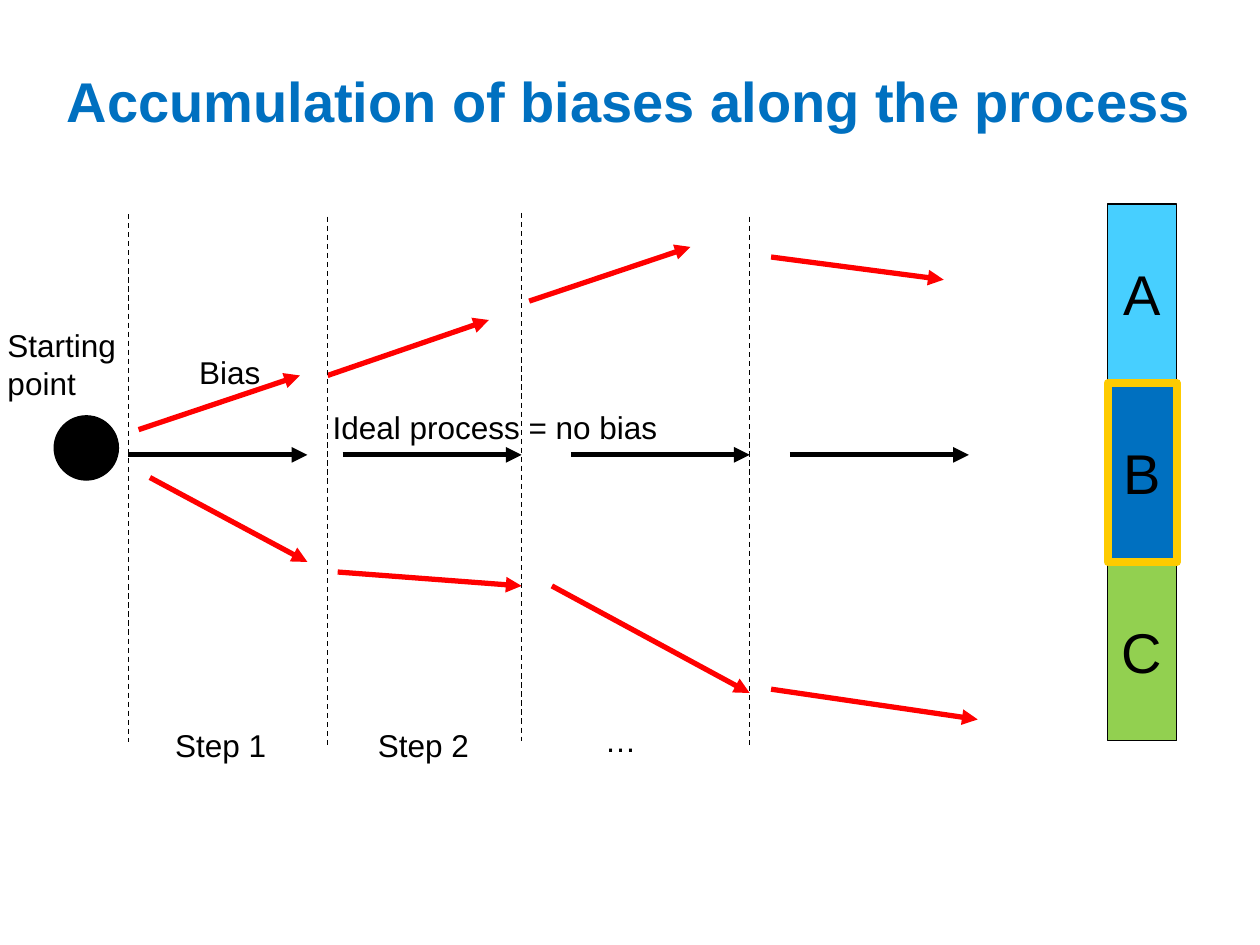
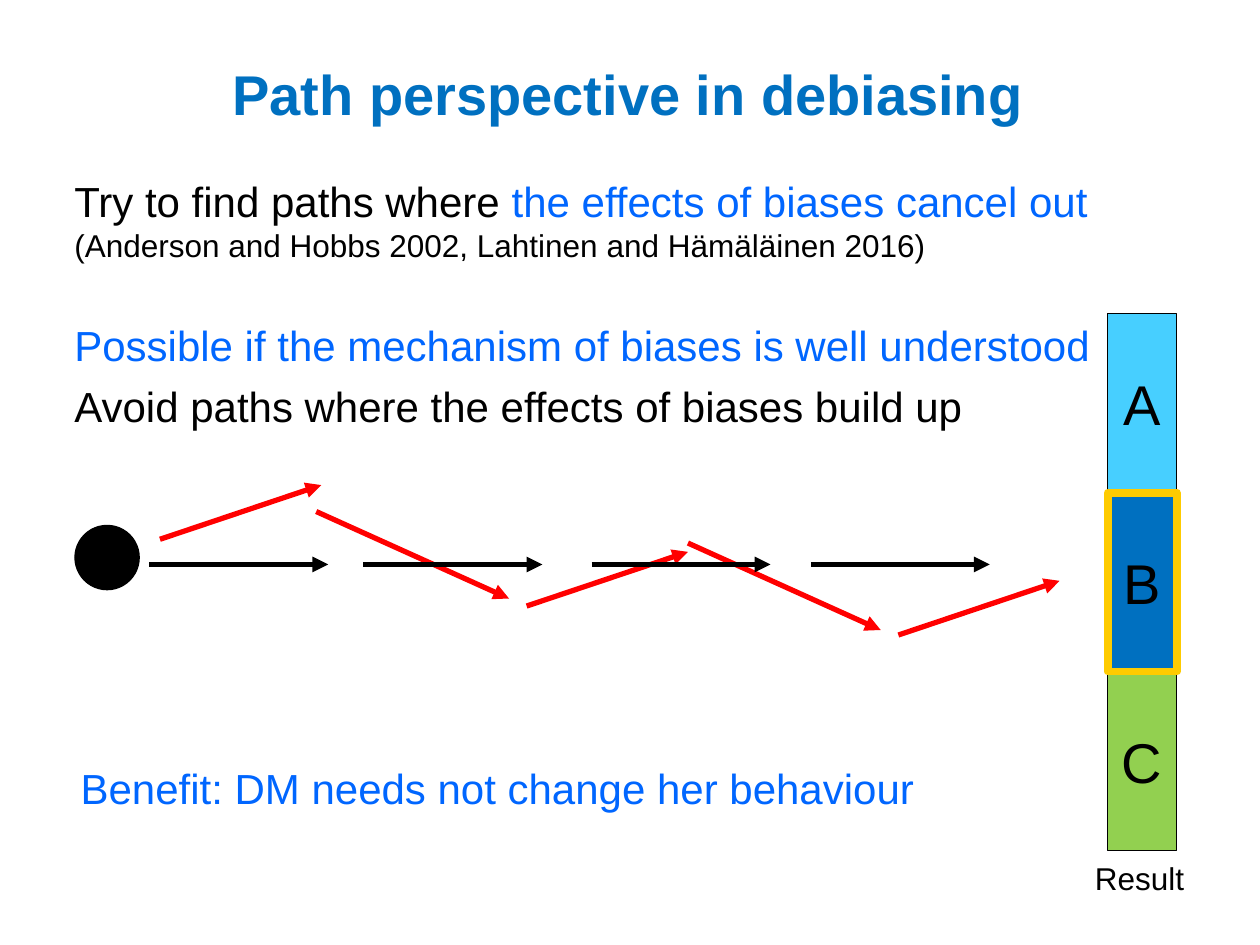
"""Build two slides on how biases accumulate or cancel out along a process."""
from lxml.etree import SubElement
from pptx import Presentation
from pptx.dml.color import RGBColor
from pptx.enum.dml import MSO_LINE
from pptx.enum.shapes import MSO_CONNECTOR, MSO_SHAPE
from pptx.enum.text import MSO_ANCHOR, PP_ALIGN
from pptx.oxml.ns import qn
from pptx.util import Inches, Pt

COLORS = {
    "title": "0070C0",
    "text": "000000",
    "highlight": "0066FF",
    "ideal": "000000",
    "bias": "FF0000",
    "A": "47CFFF",
    "B": "0070C0",
    "C": "92D050",
    "chosen": "FECB00",
}
FONT = "Arial"

presentation = Presentation()
presentation.slide_width = Inches(10)
presentation.slide_height = Inches(7.5)
column = presentation.slide_width // 100
row = presentation.slide_height // 75


def write(frame, text, size=18, color="text", bold=False, align=PP_ALIGN.LEFT,
          new_paragraph=False, space_before=0):
    paragraph = frame.add_paragraph() if new_paragraph else frame.paragraphs[-1]
    paragraph.alignment = align
    if space_before:
        paragraph.space_before = Pt(space_before)
    run = paragraph.add_run()
    run.text = text
    run.font.name = FONT
    run.font.size = Pt(size)
    run.font.bold = bold
    run.font.color.rgb = RGBColor.from_string(COLORS[color])


def draw_line(slide, start, end, color="ideal", width=3, dashed=False):
    connector = slide.shapes.add_connector(
        MSO_CONNECTOR.STRAIGHT,
        round(start[0] * column), round(start[1] * row),
        round(end[0] * column), round(end[1] * row))
    connector.line.color.rgb = RGBColor.from_string(COLORS[color])
    connector.line.width = Pt(width)
    properties = connector._element.spPr
    if dashed:
        connector.line.dash_style = MSO_LINE.DASH
    else:
        SubElement(properties.find(qn("a:ln")), qn("a:tailEnd"), type="triangle")
    SubElement(properties, qn("a:effectLst"))


accumulation, debiasing = [
    presentation.slides.add_slide(presentation.slide_layouts[6]) for _ in range(2)]

accumulating_biases = [
    ((11.9, 37.9), (24.4, 44.6)), ((26.8, 45.4), (41.4, 46.5)),
    ((43.8, 46.5), (59.5, 55)), ((61.2, 54.7), (77.6, 57.1)),
    ((11, 34.1), (23.8, 29.8)), ((26, 29.8), (38.8, 25.4)),
    ((42, 23.9), (54.8, 19.6)), ((61.2, 20.4), (74.9, 22.2)),
]
cancelling_biases = [
    ((12.7, 42.8), (25.5, 38.5)), ((25.1, 40.6), (40.4, 47.5)),
    ((41.8, 48.1), (54.6, 43.8)), ((54.6, 43.1), (69.9, 50)),
    ((71.3, 50.4), (84.1, 46.1)),
]

for slide, bias_arrows, shift_right, shift_down in (
        (accumulation, accumulating_biases, 0, 0),
        (debiasing, cancelling_biases, 1.65, 8.7)):
    for start, end in bias_arrows:
        draw_line(slide, start, end, color="bias")

    ideal_row = 36.1 + shift_down
    for left in (10.2, 27.2, 45.3, 62.7):
        left += shift_right
        draw_line(slide, (left, ideal_row), (left + 14.2, ideal_row))

    starting_point = slide.shapes.add_shape(
        MSO_SHAPE.OVAL, round((4.3 + shift_right) * column),
        round((33 + shift_down) * row), round(5.1 * column), round(5.1 * row))
    starting_point.shadow.inherit = False
    starting_point.fill.solid()
    starting_point.fill.fore_color.rgb = RGBColor.from_string(COLORS["ideal"])
    starting_point.line.color.rgb = RGBColor.from_string(COLORS["ideal"])
    starting_point.line.width = Pt(0.75)

    for result, level, outline, width in (
            ("A", 0, "text", 0.75), ("C", 2, "text", 0.75), ("B", 1, "chosen", 4.5)):
        bar = slide.shapes.add_shape(
            MSO_SHAPE.RECTANGLE, round(87.9 * column),
            round((16.2 + shift_down + 14.2 * level) * row),
            round(5.5 * column), round(14.2 * row))
        bar.shadow.inherit = False
        bar.fill.solid()
        bar.fill.fore_color.rgb = RGBColor.from_string(COLORS[result])
        bar.line.color.rgb = RGBColor.from_string(COLORS[outline])
        bar.line.width = Pt(width)
        bar.text_frame.word_wrap = False
        bar.text_frame.vertical_anchor = MSO_ANCHOR.MIDDLE
        write(bar.text_frame, result, size=32, align=PP_ALIGN.CENTER)

for boundary, top in ((10.2, 17), (26, 17.2), (41.4, 16.9), (59.5, 17.2)):
    draw_line(accumulation, (boundary, top), (boundary, top + 41.9), width=0.75, dashed=True)

title_format = {"size": 32, "color": "title", "bold": True}
text_boxes = [
    (accumulation, (5.3, 5.3, 91.1, 11.8),
     [("Accumulation of biases along the process", title_format)]),
    (accumulation, (0.6, 25.9, 9.4, 6.1),
     [("Starting", {}), ("point", {"new_paragraph": True})]),
    (accumulation, (15.8, 28, 5.2, 3), [("Bias", {})]),
    (accumulation, (26.4, 32.4, 27, 3), [("Ideal process = no bias", {})]),
    (accumulation, (13.9, 57.6, 8, 3), [("Step 1", {})]),
    (accumulation, (30, 57.6, 8, 3), [("Step 2", {})]),
    (accumulation, (48, 57.2, 3, 3), [("…", {})]),
    (debiasing, (6.2, 4.7, 87.3, 11.8),
     [("Path perspective in debiasing", {**title_format, "align": PP_ALIGN.CENTER})]),
    (debiasing, (5.9, 13.9, 81.5, 21), [
        ("Try to find paths where ", {"size": 24}),
        ("the effects of biases cancel out ", {"size": 24, "color": "highlight"}),
        ("(Anderson and Hobbs 2002, Lahtinen and Hämäläinen 2016)", {}),
        ("Possible if the mechanism of biases is well understood",
         {"size": 24, "color": "highlight", "new_paragraph": True, "space_before": 32}),
        ("Avoid paths where the effects of biases build up",
         {"size": 24, "new_paragraph": True, "space_before": 6}),
    ]),
    (debiasing, (6.4, 60.5, 78, 4),
     [("Benefit: DM needs not change her behaviour", {"size": 24, "color": "highlight"})]),
    (debiasing, (86.9, 68.2, 8, 3), [("Result", {})]),
]

for slide, (left, top, width, height), runs in text_boxes:
    frame = slide.shapes.add_textbox(
        round(left * column), round(top * row),
        round(width * column), round(height * row)).text_frame
    frame.word_wrap = True
    frame.margin_left = frame.margin_right = frame.margin_top = frame.margin_bottom = 0
    for text, text_format in runs:
        write(frame, text, **text_format)

presentation.save("out.pptx")
